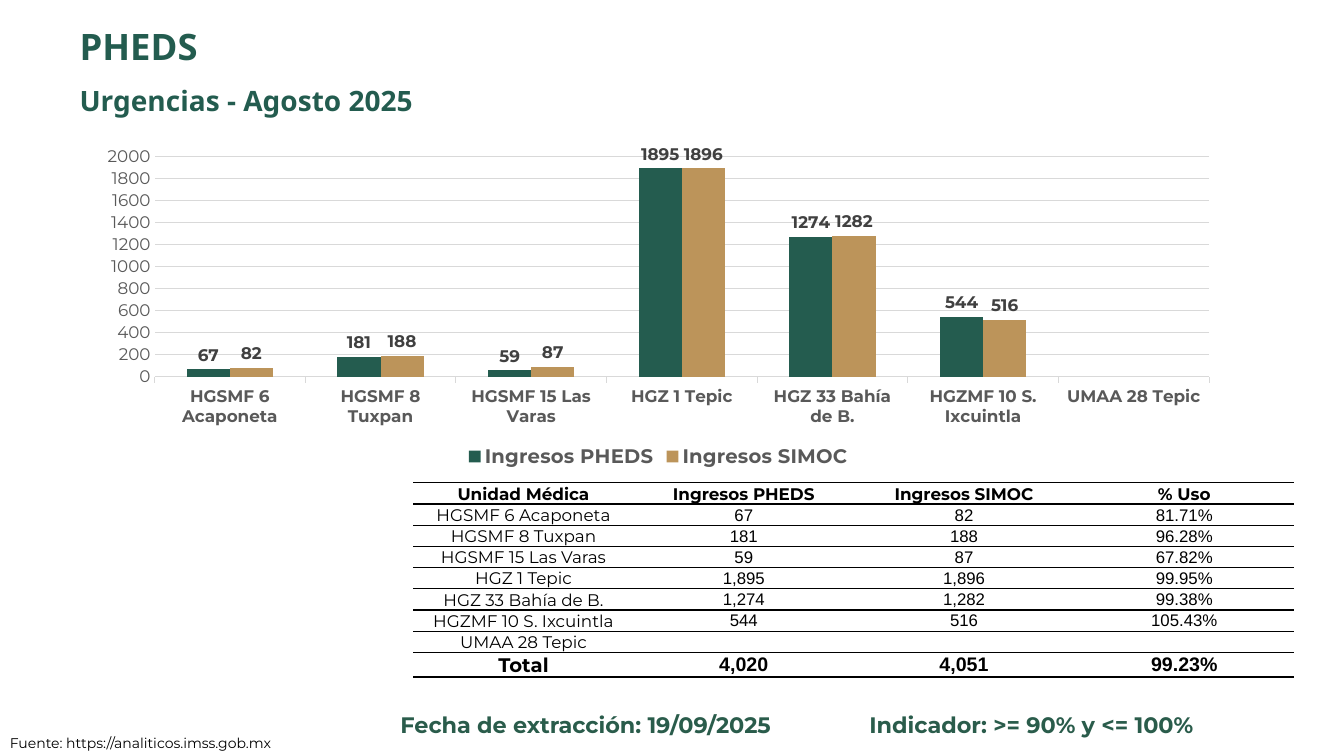
from pptx import Presentation
from pptx.chart.data import CategoryChartData
from pptx.dml.color import RGBColor
from pptx.enum.chart import XL_CHART_TYPE, XL_LABEL_POSITION, XL_LEGEND_POSITION, XL_TICK_MARK
from pptx.enum.text import MSO_ANCHOR, PP_ALIGN
from pptx.oxml import parse_xml
from pptx.oxml.ns import nsdecls
from pptx.util import Inches, Pt

COLUMNS = XL_CHART_TYPE.COLUMN_CLUSTERED
OUTSIDE_END = XL_LABEL_POSITION.OUTSIDE_END
BOTTOM = XL_LEGEND_POSITION.BOTTOM
TICK_OUT, TICK_NONE = XL_TICK_MARK.OUTSIDE, XL_TICK_MARK.NONE
LEFT, CENTER = PP_ALIGN.LEFT, PP_ALIGN.CENTER
TOP, MIDDLE = MSO_ANCHOR.TOP, MSO_ANCHOR.MIDDLE

SANS, TITLE_FONT, NUMBER_FONT = "Montserrat", "Noto Sans", "Arial"
GREEN, GOLD, TITLE_GREEN, NOTE_GREEN = "245C4F", "BC945A", "235C4F", "2A5C4B"
BLACK, DARK, GREY, RULE = "000000", "404040", "595959", "D9D9D9"

SERIES = ["Ingresos PHEDS", "Ingresos SIMOC"]
UNITS = [
    ("HGSMF 6 Acaponeta", 67, 82),
    ("HGSMF 8 Tuxpan", 181, 188),
    ("HGSMF 15 Las Varas", 59, 87),
    ("HGZ 1 Tepic", 1895, 1896),
    ("HGZ 33 Bahía de B.", 1274, 1282),
    ("HGZMF 10 S. Ixcuintla", 544, 516),
    ("UMAA 28 Tepic", None, None),
]


def rgb(value):
    return RGBColor.from_string(value)


def style(font, name, size, color, bold=False):
    font.name = name
    font.size = Pt(size)
    font.bold = bold
    font.color.rgb = rgb(color)


def add_text(s, box, text, name, size, color, bold=True, align=LEFT, wrap=True, spacing=None):
    tf = s.shapes.add_textbox(*map(Inches, box)).text_frame
    tf.word_wrap = wrap
    tf.text = text
    p = tf.paragraphs[0]
    p.alignment = align
    if spacing:
        p.line_spacing = spacing
    style(p.runs[0].font, name, size, color, bold)


def add_heading(s, left, top, width):
    for i, (text, size) in enumerate([("PHEDS", 26), ("Urgencias - Agosto 2025", 20)]):
        box = (left, top + 0.58 * i, width, 0.49)
        add_text(s, box, text, TITLE_FONT, size, TITLE_GREEN, spacing=0.9)


def add_admissions_chart(s, box):
    data = CategoryChartData()
    names, *values = zip(*UNITS)
    data.categories = names
    for name, counts in zip(SERIES, values):
        data.add_series(name, counts)
    chart = s.shapes.add_chart(COLUMNS, *map(Inches, box), data).chart
    chart.has_title = False
    style(chart.font, SANS, 10, BLACK)

    chart.has_legend = True
    chart.legend.position = BOTTOM
    chart.legend.include_in_layout = False
    style(chart.legend.font, SANS, 14, GREY, True)

    units = chart.category_axis
    units.major_tick_mark = TICK_OUT
    units.format.line.color.rgb = rgb(RULE)
    units.format.line.width = Pt(0.75)
    style(units.tick_labels.font, SANS, 12, GREY, True)

    counts = chart.value_axis
    counts.minimum_scale, counts.maximum_scale, counts.major_unit = 0, 2000, 200
    counts.major_tick_mark = TICK_NONE
    counts.format.line.fill.background()
    counts.major_gridlines.format.line.color.rgb = rgb(RULE)
    counts.major_gridlines.format.line.width = Pt(0.75)
    style(counts.tick_labels.font, SANS, 12, GREY)

    plot = chart.plots[0]
    plot.gap_width = 150
    plot.overlap = 0
    plot.vary_by_categories = False
    for series, color in zip(plot.series, (GREEN, GOLD)):
        series.format.fill.solid()
        series.format.fill.fore_color.rgb = rgb(color)
        labels = series.data_labels
        labels.show_value = True
        labels.position = OUTSIDE_END
        style(labels.font, SANS, 12, DARK, True)


def set_borders(cell):
    black = f'<a:solidFill><a:srgbClr val="{BLACK}"/></a:solidFill>'
    sides = [("L", "<a:noFill/>"), ("R", "<a:noFill/>"), ("T", black), ("B", black)]
    for i, (side, fill) in enumerate(sides):
        line = f'<a:ln{side} {nsdecls("a")} w="{Pt(1)}">{fill}</a:ln{side}>'
        cell._tc.get_or_add_tcPr().insert(i, parse_xml(line))


def fill_cell(cell, text, name, size, bold, anchor):
    cell.fill.background()
    set_borders(cell)
    cell.margin_left = cell.margin_right = cell.margin_top = Inches(0.01)
    cell.margin_bottom = 0
    cell.vertical_anchor = anchor
    cell.text_frame.text = text
    p = cell.text_frame.paragraphs[0]
    p.alignment = CENTER
    for r in p.runs:
        style(r.font, name, size, BLACK, bold)
    if not p.runs:
        p._p.get_or_add_endParaRPr().set("sz", str(size * 100))


def table_row(name, pheds, simoc):
    if pheds is None:
        return [name, "", "", ""]
    return [name, f"{pheds:,}", f"{simoc:,}", f"{pheds / simoc:.2%}"]


def add_usage_table(s, left, top, width):
    totals = [sum(unit[i] or 0 for unit in UNITS) for i in (1, 2)]
    rows = [["Unidad Médica", *SERIES, "% Uso"]]
    rows += [table_row(*unit) for unit in UNITS + [("Total", *totals)]]
    last = len(rows) - 1
    height = 0.21 * last + 0.24
    box = map(Inches, (left, top, width, height))
    table = s.shapes.add_table(len(rows), 4, *box).table
    table.first_row = table.horz_banding = False
    for i, row in enumerate(rows):
        table.rows[i].height = Inches(0.24 if i == last else 0.21)
        for j, text in enumerate(row):
            name = NUMBER_FONT if i and j else SANS
            anchor = TOP if 0 < i < last and j == 0 else MIDDLE
            size = 14 if i == last else 12
            fill_cell(table.cell(i, j), text, name, size, i in (0, last), anchor)


def add_footer(s, top):
    notes = [
        (3.29, 5.04, "Fecha de extracción: 19/09/2025"),
        (7.34, 5.78, "Indicador: >= 90% y <= 100%"),
    ]
    for left, width, text in notes:
        add_text(s, (left, top, width, 0.37), text, SANS, 16, NOTE_GREEN, align=CENTER)
    source = "Fuente: https://analiticos.imss.gob.mx"
    add_text(s, (0, top + 0.23, 2.92, 0.27), source, SANS, 10, BLACK, bold=False, wrap=False)


def main():
    prs = Presentation()
    prs.slide_width, prs.slide_height = Inches(13.33), Inches(7.5)
    s = prs.slides.add_slide(prs.slide_layouts[6])
    add_heading(s, 0.69, 0.24, 9.48)
    add_usage_table(s, 4.1, 4.79, 8.74)
    add_admissions_chart(s, (0.84, 1.39, 11.38, 3.3))
    add_footer(s, 7.01)
    prs.save("out.pptx")


if __name__ == "__main__":
    main()
